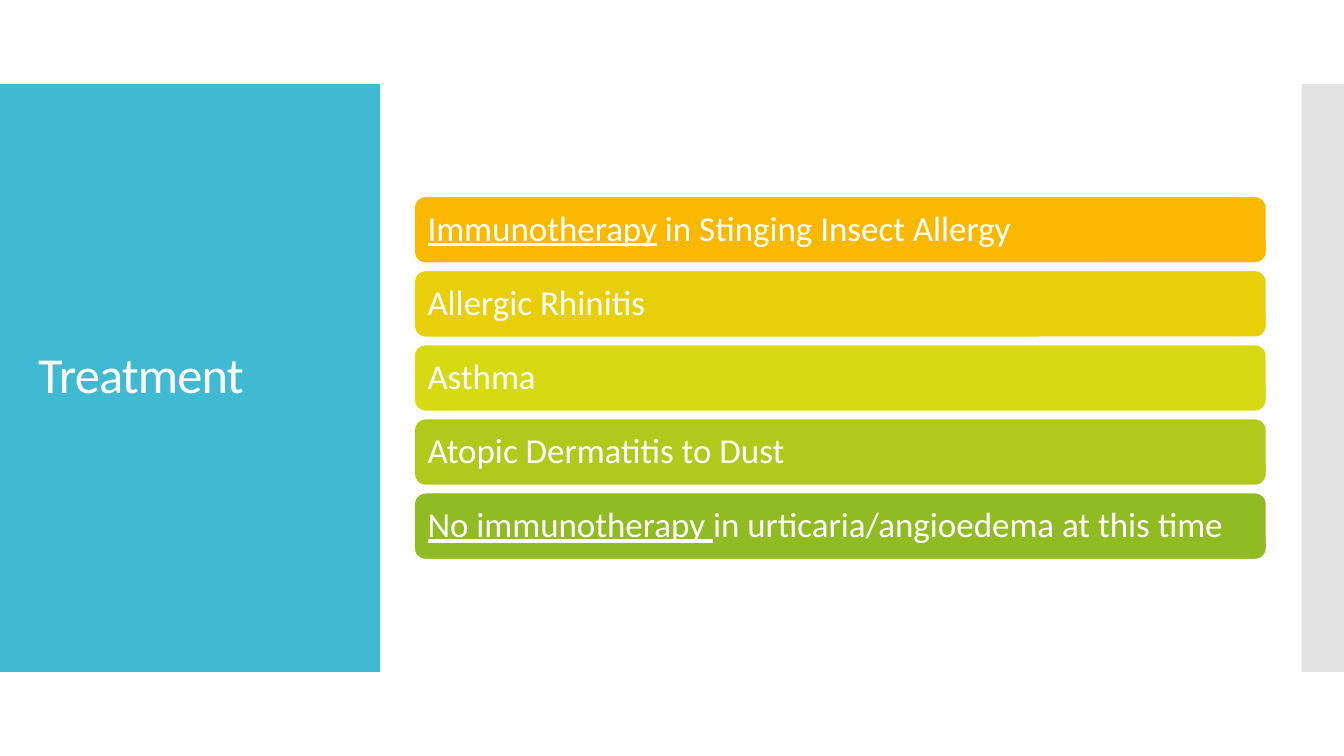
"""Build the Treatment slide: a title panel beside five stacked coloured bars."""
from dataclasses import dataclass

from lxml.etree import SubElement
from pptx import Presentation
from pptx.dml.color import RGBColor
from pptx.enum.shapes import MSO_SHAPE as Shape
from pptx.enum.text import MSO_ANCHOR as Anchor, PP_ALIGN as Align
from pptx.oxml.ns import qn
from pptx.util import Inches, Pt

TITLE = "Treatment"
TREATMENTS = [
    ("Immunotherapy", " in Stinging Insect Allergy", "FAB900"),
    ("", "Allergic Rhinitis", "E9CE0A"),
    ("", "Asthma", "D7D913"),
    ("", "Atopic Dermatitis to Dust", "B0CA1B"),
    ("No immunotherapy ", "in urticaria/angioedema at this time", "90BB23"),
]


@dataclass(frozen=True)
class Theme:
    font: str = "Calibri"
    title_size: float = 36
    bar_size: float = 25
    outline: float = 0.85
    text: str = "FFFFFF"
    panel: str = "40BAD2"
    edge: str = "C8C8C8"


THEME = Theme()
WIDTH, HEIGHT = 13.33, 7.5
BAND_TOP, BAND_HEIGHT = HEIGHT / 9, HEIGHT * 7 / 9
PANEL_WIDTH, EDGE_WIDTH = 3.77, 0.42
BAR_LEFT, BAR_WIDTH, BAR_HEIGHT = 4.11, 8.45, 0.66
STACK_HEIGHT = 3.6
STACK_TOP = (HEIGHT - STACK_HEIGHT) / 2
PITCH = (STACK_HEIGHT - BAR_HEIGHT) / (len(TREATMENTS) - 1)


def add_block(slide, kind, box, color):
    block = slide.shapes.add_shape(kind, *map(Inches, box))
    block.shadow.inherit = False
    block.fill.solid()
    block.fill.fore_color.rgb = RGBColor.from_string(color)
    block.line.fill.background()
    return block


def style_text(frame, size):
    frame.word_wrap = True
    frame.vertical_anchor = Anchor.MIDDLE
    line = frame.paragraphs[0]
    line.alignment = Align.LEFT
    line.line_spacing = 0.9
    line.font.name = THEME.font
    line.font.size = Pt(size)
    line.font.color.rgb = RGBColor.from_string(THEME.text)
    return line


def add_title(slide):
    title = slide.shapes.add_textbox(*map(Inches, (0.28, 1.23, 3.22, 5.03)))
    heading = style_text(title.text_frame, THEME.title_size).add_run()
    heading.text = TITLE
    heading.font._element.set("spc", "-60")


def add_bar(slide, row, underlined, plain, color):
    box = (BAR_LEFT, STACK_TOP + row * PITCH, BAR_WIDTH, BAR_HEIGHT)
    bar = add_block(slide, Shape.ROUNDED_RECTANGLE, box, color)
    bar.line.color.rgb = RGBColor.from_string(THEME.text)
    bar.line.width = Pt(THEME.outline)
    frame = bar.text_frame
    frame.margin_left = frame.margin_right = Inches(0.1)
    frame.margin_top = frame.margin_bottom = Inches(0.1)
    line = style_text(frame, THEME.bar_size)
    if underlined:
        lead = line.add_run()
        lead.text = underlined
        lead.font.underline = True
    line.add_run().text = plain


def main():
    deck = Presentation()
    deck.slide_width, deck.slide_height = Inches(WIDTH), Inches(HEIGHT)
    slide = deck.slides.add_slide(deck.slide_layouts[6])
    add_block(slide, Shape.RECTANGLE, (0, BAND_TOP, PANEL_WIDTH, BAND_HEIGHT), THEME.panel)
    edge_box = (WIDTH - EDGE_WIDTH, BAND_TOP, EDGE_WIDTH, BAND_HEIGHT)
    edge = add_block(slide, Shape.RECTANGLE, edge_box, THEME.edge)
    edge_color = edge.fill._xPr.find(qn("a:solidFill"))[0]
    SubElement(edge_color, qn("a:alpha"), val="50000")
    add_title(slide)
    for row, treatment in enumerate(TREATMENTS):
        add_bar(slide, row, *treatment)
    deck.save("out.pptx")


if __name__ == "__main__":
    main()
